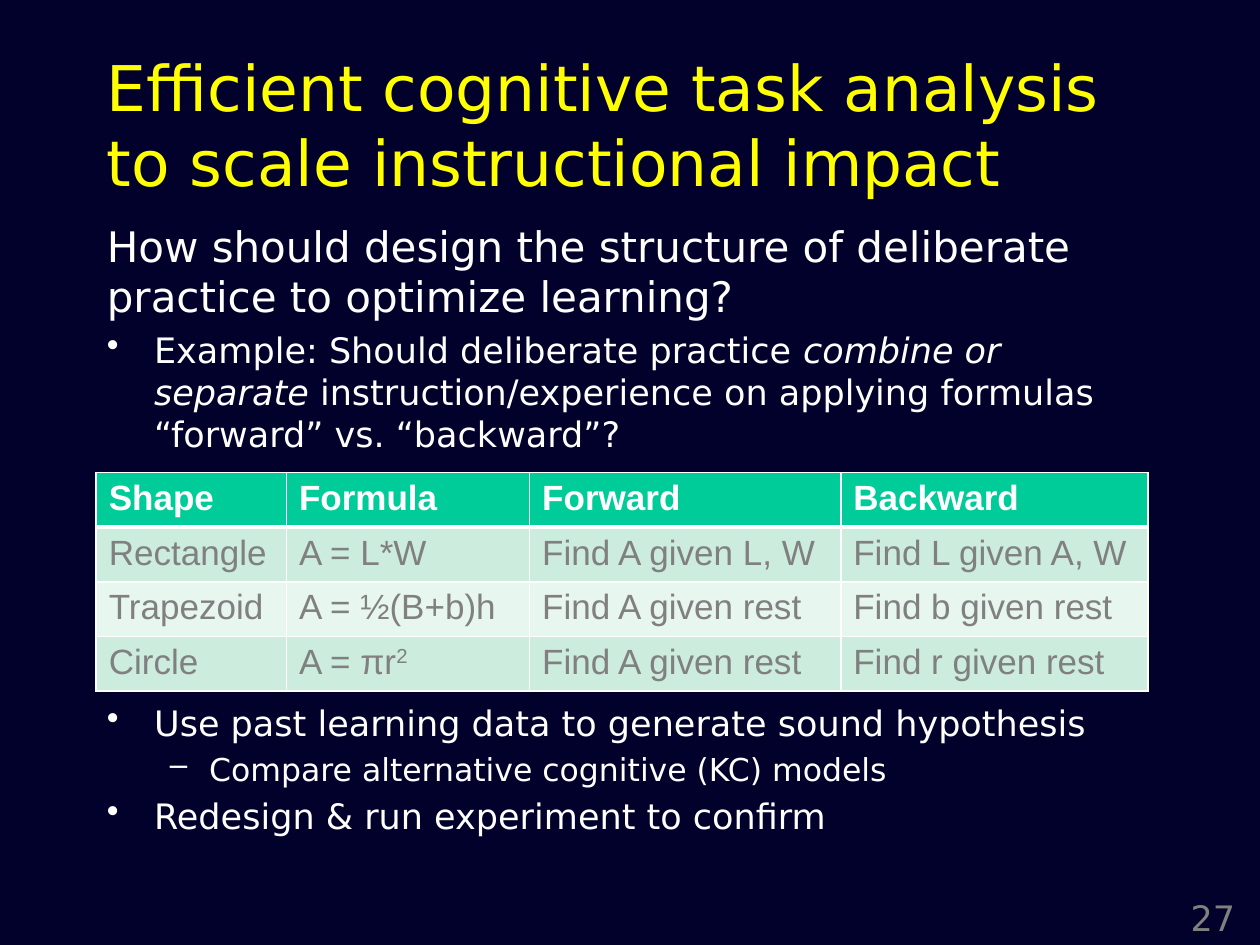
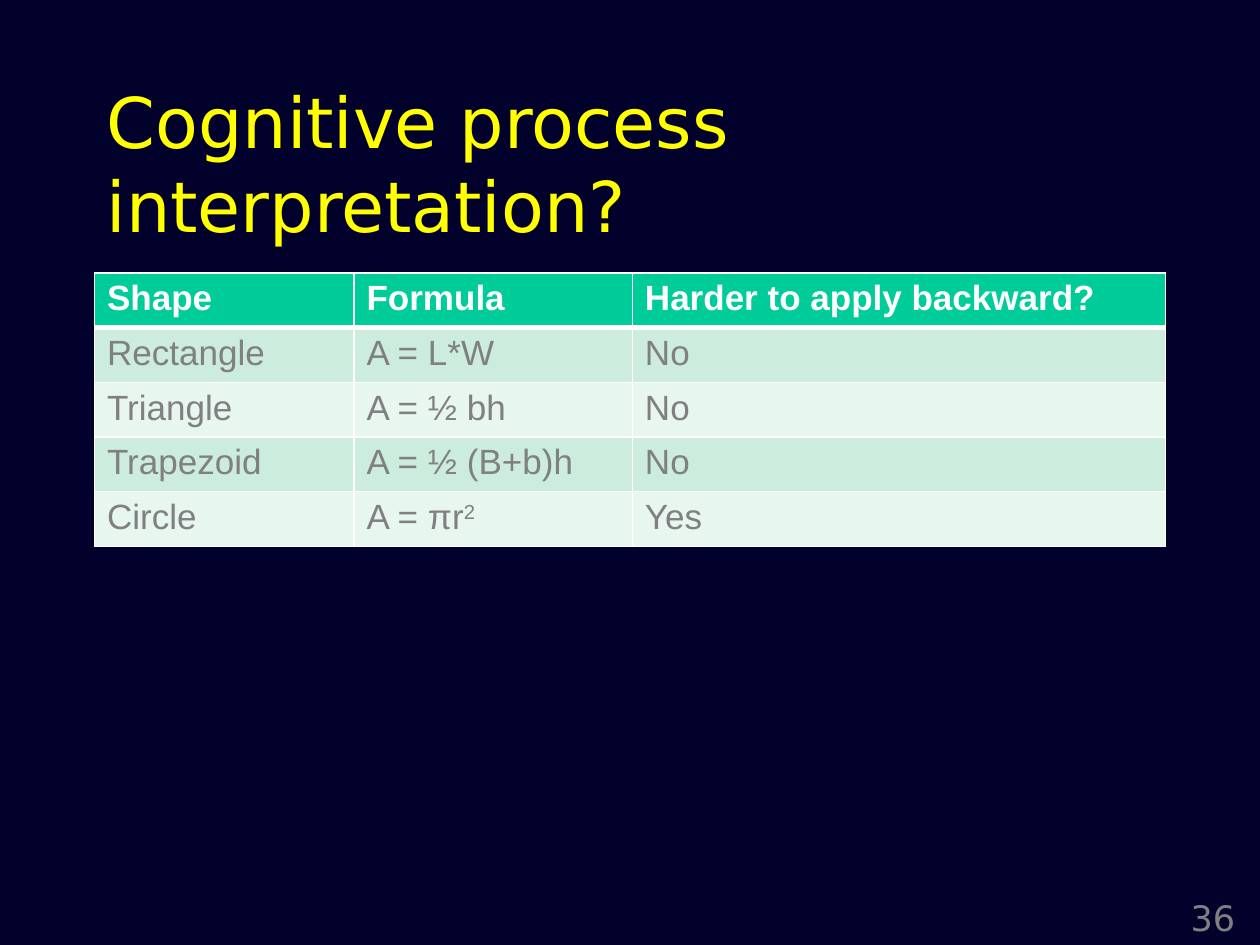
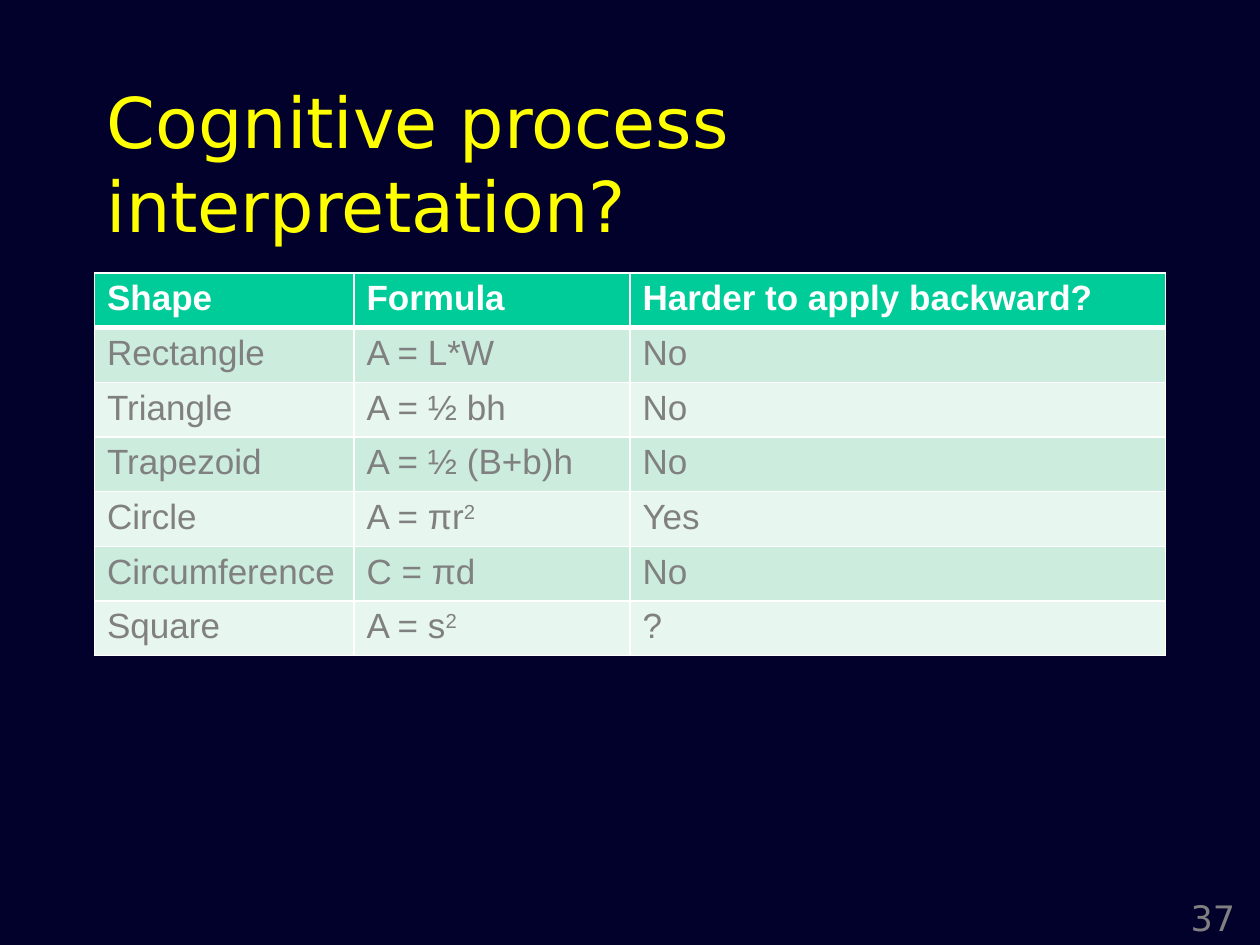
"""Builds three slides on cognitive task analysis of geometry formulas."""
import pptx
import pptx.dml.color
import pptx.enum.text
import pptx.oxml.ns
import pptx.util
import lxml.etree

Pt = pptx.util.Pt

BACKGROUND, YELLOW, WHITE, GREY = "01012C", "FFFF00", "FFFFFF", "808080"
HEADER_FILL, BAND_FILLS = "00CC99", ("CCECDE", "E7F6EF")
SLIDE_FONT, TABLE_FONT = "DejaVu Sans", "Arial"
TABLE_SIZE, ROW_HEIGHT = 20, 29.2
THIN, THICK = 1, 3

LEVELS = {
    "lead": {"size": 24, "bullet": None, "left": 0, "hang": 0},
    "point": {"size": 20, "bullet": "•", "left": 27, "hang": 27},
    "detail": {"size": 18, "bullet": "–", "left": 58.5, "hang": 22.5},
}

RECTANGLE = "A = L*W"
CIRCLE = [("A = πr", ""), ("2", "super")]
SHAPE_HEADER = ("Shape", "Formula", "Harder to apply backward?")
SHAPE_ROWS = [
    ("Rectangle", RECTANGLE, "No"),
    ("Triangle", "A = ½ bh", "No"),
    ("Trapezoid", "A = ½ (B+b)h", "No"),
    ("Circle", CIRCLE, "Yes"),
]
MORE_ROWS = [
    ("Circumference", "C = πd", "No"),
    ("Square", [("A = s", ""), ("2", "super")], "?"),
]
INTERPRETATION = {
    "title": "Cognitive process interpretation?",
    "title_size": 40,
    "title_place": (54, 48, 612, 90),
    "table_corner": (54, 156),
    "texts": [],
}

SLIDES = [
    {
        "number": "27",
        "title": "Efficient cognitive task analysis to scale instructional impact",
        "title_size": 36,
        "title_place": (54, 31.5, 612, 78.5),
        "texts": [
            ((54, 122.4, 612, 142), [
                ("lead", "How should design the structure of deliberate practice to optimize learning?"),
                ("point", [
                    ("Example: Should deliberate practice ", ""),
                    ("combine or separate", "italic"),
                    (" instruction/experience on applying formulas “forward” vs. “backward”?", ""),
                ]),
            ]),
            ((54, 397.2, 612, 99), [
                ("point", "Use past learning data to generate sound hypothesis"),
                ("detail", "Compare alternative cognitive (KC) models"),
                ("point", "Redesign & run experiment to confirm"),
            ]),
        ],
        "table_corner": (55, 270),
        "columns": (108.7, 139, 177.8, 175.7),
        "rows": [
            ("Shape", "Formula", "Forward", "Backward"),
            ("Rectangle", RECTANGLE, "Find A given L, W", "Find L given A, W"),
            ("Trapezoid", "A = ½(B+b)h", "Find A given rest", "Find b given rest"),
            ("Circle", CIRCLE, "Find A given rest", "Find r given rest"),
        ],
    },
    {**INTERPRETATION, "number": "36", "columns": (148.3, 159.1, 304.6),
     "rows": [SHAPE_HEADER, *SHAPE_ROWS]},
    {**INTERPRETATION, "number": "37", "columns": (148.3, 157.7, 306),
     "rows": [SHAPE_HEADER, *SHAPE_ROWS, *MORE_ROWS]},
]


def rgb(color):
    return pptx.dml.color.RGBColor.from_string(color)


def add_child(parent, tag, **attributes):
    return lxml.etree.SubElement(parent, pptx.oxml.ns.qn(tag), attributes)


def add_runs(para, content, size, font, color, bold=False):
    for text, style in [(content, "")] if isinstance(content, str) else content:
        span = para.add_run()
        span.text = text
        span.font.size = Pt(size)
        span.font.name = font
        span.font.bold = bold
        span.font.italic = style == "italic"
        span.font.color.rgb = rgb(color)
        if style == "super":
            span.font._element.set("baseline", "30000")


def add_box(page, place, anchor=pptx.enum.text.MSO_ANCHOR.TOP):
    frame = page.shapes.add_textbox(*map(Pt, place)).text_frame
    frame.word_wrap = True
    frame.vertical_anchor = anchor
    return frame


def add_outline(page, place, items):
    frame = add_box(page, place)
    for index, (level_name, content) in enumerate(items):
        level = LEVELS[level_name]
        para = frame.add_paragraph() if index else frame.paragraphs[0]
        if level["bullet"]:
            properties = para._p.get_or_add_pPr()
            properties.set("marL", str(Pt(level["left"])))
            properties.set("indent", str(-Pt(level["hang"])))
            add_child(properties, "a:buChar", char=level["bullet"])
        if index:
            para.space_before = Pt(level["size"] * 0.2)
        add_runs(para, content, level["size"], SLIDE_FONT, WHITE)


def add_borders(cell, row_index):
    properties = cell._tc.get_or_add_tcPr()
    top = THICK if row_index == 1 else THIN
    bottom = THICK if row_index == 0 else THIN
    for tag, width in (("a:lnL", THIN), ("a:lnR", THIN), ("a:lnT", top), ("a:lnB", bottom)):
        line = add_child(properties, tag, w=str(Pt(width)))
        add_child(add_child(line, "a:solidFill"), "a:srgbClr", val=WHITE)


def add_formula_table(page, corner, columns, rows):
    left, top = corner
    table = page.shapes.add_table(
        len(rows), len(columns), Pt(left), Pt(top),
        Pt(sum(columns)), Pt(ROW_HEIGHT * len(rows))).table
    for column, width in zip(table.columns, columns):
        column.width = Pt(width)
    for row_index, row in enumerate(rows):
        table.rows[row_index].height = Pt(ROW_HEIGHT)
        header = row_index == 0
        fill = HEADER_FILL if header else BAND_FILLS[(row_index - 1) % 2]
        for column_index, content in enumerate(row):
            cell = table.cell(row_index, column_index)
            add_borders(cell, row_index)
            cell.fill.solid()
            cell.fill.fore_color.rgb = rgb(fill)
            add_runs(cell.text_frame.paragraphs[0], content, TABLE_SIZE,
                     TABLE_FONT, WHITE if header else GREY, header)


def add_page(deck, content):
    page = deck.slides.add_slide(deck.slide_layouts[6])
    page.background.fill.solid()
    page.background.fill.fore_color.rgb = rgb(BACKGROUND)
    number = add_box(page, (673.2, 509, 49, 31))
    add_runs(number.paragraphs[0], content["number"], 20, SLIDE_FONT, GREY)
    title = add_box(page, content["title_place"], pptx.enum.text.MSO_ANCHOR.MIDDLE)
    add_runs(title.paragraphs[0], content["title"], content["title_size"], SLIDE_FONT, YELLOW)
    for place, items in content["texts"]:
        add_outline(page, place, items)
    add_formula_table(page, content["table_corner"], content["columns"], content["rows"])


def main():
    deck = pptx.Presentation()
    deck.slide_width, deck.slide_height = Pt(720), Pt(540)
    for content in SLIDES:
        add_page(deck, content)
    deck.save("out.pptx")


if __name__ == "__main__":
    main()
